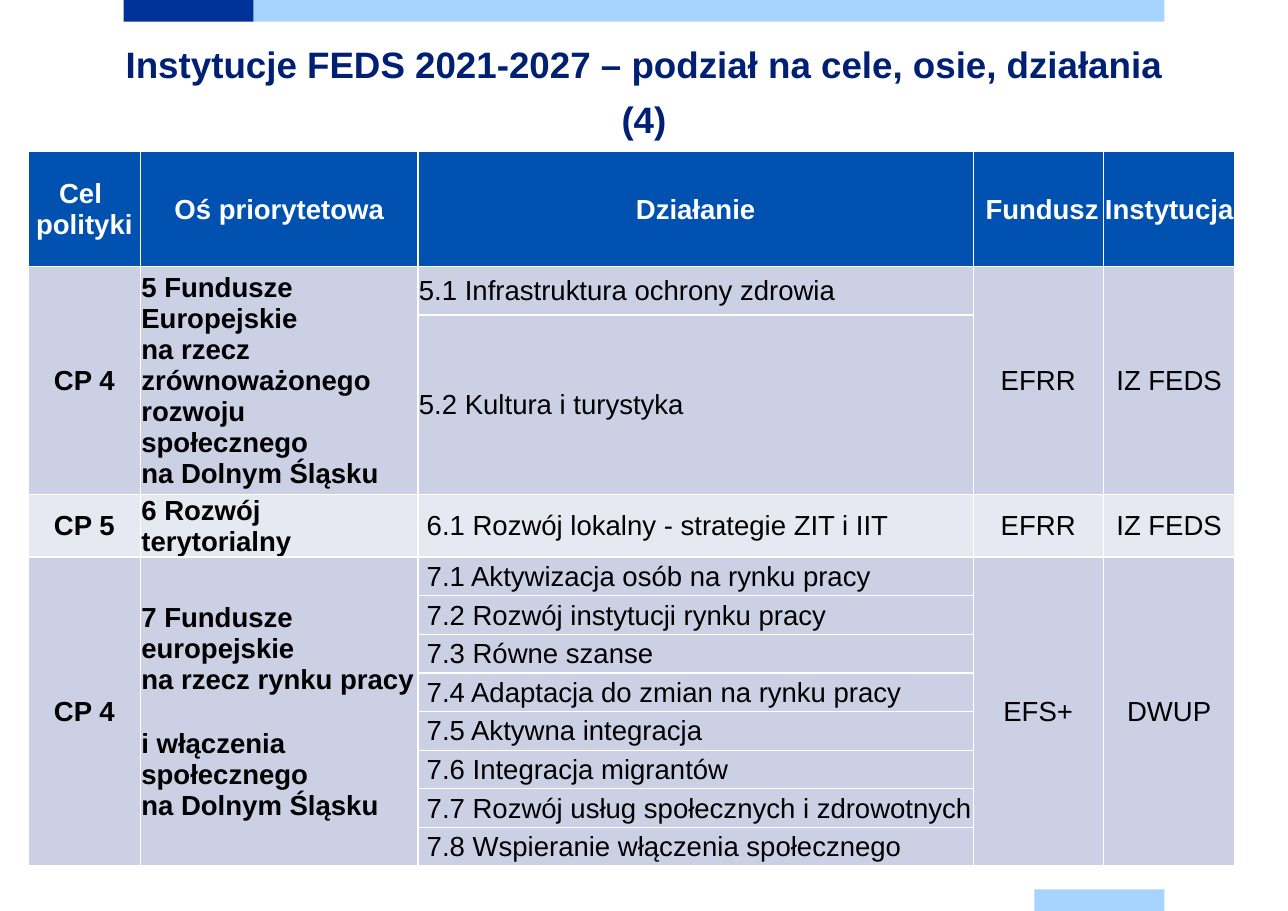
import lxml.etree
import pptx
import pptx.dml.color
import pptx.enum.shapes
import pptx.enum.text
import pptx.oxml.ns
import pptx.util

Cm = pptx.util.Cm
Pt = pptx.util.Pt
Align = pptx.enum.text.PP_ALIGN

COLOURS = {
    "navy": "003399", "sky": "A6D3FF", "title": "002073", "header": "0051B0",
    "band": "CBD0E4", "light": "E7E9F2", "white": "FFFFFF", "black": "000000",
}
HEADERS = ["Cel \npolityki", "Oś priorytetowa", "Działanie", "Fundusz", "Instytucja"]
COLUMN_WIDTHS = [2.59, 6.4, 12.8, 3, 3.04]
ROW_HEIGHTS = [2.64, 1.12, 4.14, 1.14] + [0.89] * 8
WORD_SPACE = 0.18

# goal, priority axis, measures, fund, institution, fill, indent of the measures
AXES = [
    ("CP 4",
     "5 Fundusze Europejskie \vna rzecz zrównoważonego rozwoju społecznego \vna Dolnym Śląsku",
     ["5.1 Infrastruktura ochrony zdrowia", "5.2 Kultura i turystyka"],
     "EFRR", "IZ FEDS", "band", 0),
    ("CP 5", "6 Rozwój terytorialny",
     ["6.1 Rozwój lokalny - strategie ZIT i IIT"],
     "EFRR", "IZ FEDS", "light", WORD_SPACE),
    ("CP 4",
     "7 Fundusze europejskie \vna rzecz rynku pracy \vi włączenia społecznego \vna Dolnym Śląsku",
     ["7.1 Aktywizacja osób na rynku pracy",
      "7.2 Rozwój instytucji rynku pracy",
      "7.3 Równe szanse",
      "7.4 Adaptacja do zmian na rynku pracy",
      "7.5 Aktywna integracja",
      "7.6 Integracja migrantów",
      "7.7 Rozwój usług społecznych i zdrowotnych",
      "7.8 Wspieranie włączenia społecznego"],
     "EFS+", "DWUP", "band", WORD_SPACE),
]


def colour(name):
    return pptx.dml.color.RGBColor.from_string(COLOURS[name])


def write(frame, text, size=18, tint="black", bold=False, align=Align.LEFT, spacing=None):
    frame.word_wrap = True
    frame.text = text
    for para in frame.paragraphs:
        para.alignment = align
        if spacing:
            para.line_spacing = Pt(spacing)
        for span in para.runs:
            span.font.name = "Arial"
            span.font.size = Pt(size)
            span.font.bold = bold
            span.font.color.rgb = colour(tint)


def add_bar(page, left, top, width, fill):
    bar = page.shapes.add_shape(
        pptx.enum.shapes.MSO_SHAPE.RECTANGLE, Cm(left), Cm(top), Cm(width), Cm(0.5))
    bar.shadow.inherit = False
    bar.fill.solid()
    bar.fill.fore_color.rgb = colour(fill)
    bar.line.fill.background()


def add_title(page, text):
    box = page.shapes.add_textbox(Cm(2.85), Cm(0.7), Cm(24), Cm(2.39))
    frame = box.text_frame
    frame.margin_left = frame.margin_right = frame.margin_top = frame.margin_bottom = 0
    write(frame, text, size=24, tint="title", bold=True, align=Align.CENTER, spacing=36)


def style_cell(cell, fill):
    """Give a cell its margins, thin white borders and fill."""
    cell.margin_left = cell.margin_right = cell.margin_top = Cm(0.02)
    cell.margin_bottom = 0
    cell.vertical_anchor = pptx.enum.text.MSO_ANCHOR.MIDDLE
    qn = pptx.oxml.ns.qn
    properties = cell._tc.get_or_add_tcPr()
    for side in ("a:lnL", "a:lnR", "a:lnT", "a:lnB"):
        border = lxml.etree.SubElement(properties, qn(side), w=str(Pt(1)))
        solid = lxml.etree.SubElement(border, qn("a:solidFill"))
        lxml.etree.SubElement(solid, qn("a:srgbClr"), val=COLOURS["white"])
    cell.fill.solid()
    cell.fill.fore_color.rgb = colour(fill)


def add_axis(table, first, axis):
    """Fill the rows of one priority axis and return the row after them."""
    goal, name, measures, fund, institution, fill, indent = axis
    last = first + len(measures) - 1
    for row in range(first, last + 1):
        for column in range(len(HEADERS)):
            style_cell(table.cell(row, column), fill)
    shared = [(0, goal, True, Align.CENTER), (1, name, True, Align.LEFT),
              (3, fund, False, Align.CENTER), (4, institution, False, Align.CENTER)]
    for column, text, bold, align in shared:
        cell = table.cell(first, column)
        if last > first:
            cell.merge(table.cell(last, column))
        write(cell.text_frame, text, bold=bold, align=align)
    for row, measure in enumerate(measures, first):
        cell = table.cell(row, 2)
        cell.margin_left = Cm(0.02 + indent)
        write(cell.text_frame, measure)
    return last + 1


def add_axes_table(page):
    table = page.shapes.add_table(
        len(ROW_HEIGHTS), len(HEADERS), Cm(0.65), Cm(3.5),
        Cm(sum(COLUMN_WIDTHS)), Cm(sum(ROW_HEIGHTS))).table
    table.horz_banding = False
    for column, width in zip(table.columns, COLUMN_WIDTHS):
        column.width = Cm(width)
    for row, height in zip(table.rows, ROW_HEIGHTS):
        row.height = Cm(height)
    for column, text in enumerate(HEADERS):
        cell = table.cell(0, column)
        style_cell(cell, "header")
        write(cell.text_frame, text, tint="white", bold=True, align=Align.CENTER)
    table.cell(0, HEADERS.index("Fundusz")).margin_left = Cm(0.02 + WORD_SPACE)
    institution = table.cell(0, HEADERS.index("Instytucja"))
    institution.margin_left = institution.margin_right = 0
    row = 1
    for axis in AXES:
        row = add_axis(table, row, axis)


def main():
    deck = pptx.Presentation()
    deck.slide_width, deck.slide_height = Cm(29.7), Cm(21)
    page = deck.slides.add_slide(deck.slide_layouts[6])
    add_bar(page, 2.85, 0, 3, "navy")
    add_bar(page, 5.85, 0, 21, "sky")
    add_bar(page, 23.85, 20.5, 3, "sky")
    add_axes_table(page)
    add_title(page, "Instytucje FEDS 2021-2027 – podział na cele, osie, działania (4)")
    deck.save("out.pptx")


if __name__ == "__main__":
    main()
